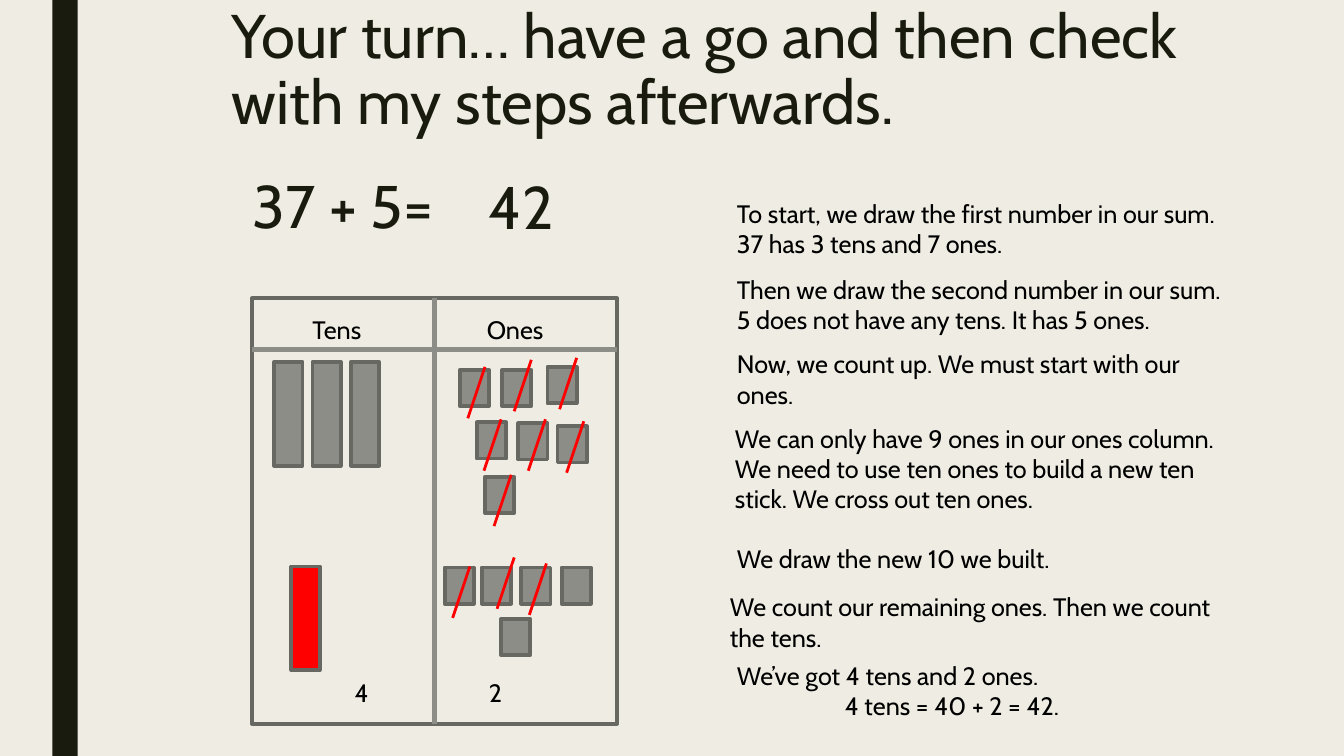
import pptx
import pptx.dml.color
import pptx.enum.shapes
import pptx.enum.text
import pptx.oxml
import pptx.util
from pptx.util import Inches

RGBColor = pptx.dml.color.RGBColor
CREAM = RGBColor(0xEF, 0xED, 0xE3)
DARK = RGBColor(0x19, 0x1B, 0x0E)
GREY = RGBColor(0x8C, 0x8D, 0x86)
EDGE = RGBColor(0x68, 0x68, 0x63)
RED = RGBColor(0xFF, 0x00, 0x00)
BLACK = RGBColor(0x00, 0x00, 0x00)

TEN_SIZE = (0.28, 1.03)
ONE_SIZE = (0.29, 0.36)
SLASH_SIZE = (0.17, 0.51)
CROSSED_ONES = [
    (2.06, 0.71, 0.08, -0.03),
    (2.48, 0.71, 0.12, -0.10),
    (2.93, 0.68, 0.12, -0.09),
    (2.23, 1.23, 0.07, -0.03),
    (2.64, 1.24, 0.10, -0.04),
    (3.03, 1.27, 0.09, -0.05),
    (2.31, 1.77, 0.09, -0.02),
    (1.91, 2.67, 0.08, -0.01),
    (2.28, 2.67, 0.15, -0.10),
    (2.67, 2.67, 0.08, -0.04),
]
REMAINING_ONES = [(3.07, 2.67), (2.47, 3.18)]
STEPS = [
    (0.07, 0, 0.71, ["To start, we draw the first number in our sum.",
                     "37 has 3 tens and 7 ones."]),
    (0.07, 0.75, 0.71, ["Then we draw the second number in our sum.",
                        "5 does not have any tens. It has 5 ones."]),
    (0.07, 1.49, 0.71, ["Now, we count up. We must start with our ones."]),
    (0.05, 2.23, 1.01, ["We can only have 9 ones in our ones column. We need to use "
                        "ten ones to build a new ten stick. We cross out ten ones."]),
    (0.07, 3.42, 0.4, ["We draw the new 10 we built."]),
    (0, 3.9, 0.71, ["We count our remaining ones. Then we count the tens."]),
    (0.07, 4.58, 0.71, ["We’ve got 4 tens and 2 ones.",
                        "4 tens = 40 + 2 = 42."]),
]


def add_text(page, box, *lines, size=18, color=BLACK, spacing=None, last_indent=0):
    frame = page.shapes.add_textbox(*map(Inches, box)).text_frame
    frame.word_wrap = True
    frame.vertical_anchor = pptx.enum.text.MSO_ANCHOR.TOP
    for index, line in enumerate(lines):
        para = frame.paragraphs[0] if index == 0 else frame.add_paragraph()
        if spacing:
            para.line_spacing = spacing
        span = para.add_run()
        span.text = line
        span.font.name = "Cabin"
        span.font.size = pptx.util.Pt(size)
        span.font.color.rgb = color
    if last_indent:
        para._p.get_or_add_pPr().set("marL", str(Inches(last_indent)))


def add_block(page, box, fill=None, edge=EDGE):
    block = page.shapes.add_shape(
        pptx.enum.shapes.MSO_SHAPE.RECTANGLE, *map(Inches, box))
    block.shadow.inherit = False
    if fill is None:
        block.fill.background()
    else:
        block.fill.solid()
        block.fill.fore_color.rgb = fill
    if edge is None:
        block.line.fill.background()
    else:
        block.line.color.rgb = edge
        block.line.width = pptx.util.Pt(2.75)


def add_line(page, start, end, color, width):
    line = page.shapes.add_connector(
        pptx.enum.shapes.MSO_CONNECTOR.STRAIGHT, *map(Inches, (*start, *end)))
    line.line.color.rgb = color
    line.line.width = pptx.util.Pt(width)
    line._element.spPr.append(pptx.oxml.parse_xml(
        '<a:effectLst xmlns:a="http://schemas.openxmlformats.org/drawingml/2006/main"/>'))


def add_heading(page, box):
    left, top, width, height = box
    add_text(page, (left, top, width, 1.62),
             "Your turn… have a go and then check with my steps afterwards.",
             size=44, color=DARK, spacing=0.89)
    for text, x, y in [("37 + 5=", 0.21, 1.76), ("42", 2.55, 1.77)]:
        add_text(page, (left + x, top + y, width, 0.67), text,
                 size=42.9, color=DARK, spacing=0.79)


def add_place_value_chart(page, box):
    left, top, width, height = box
    middle, header = left + width / 2, top + 0.51
    add_block(page, box)
    add_line(page, (middle, top), (middle, top + height), GREY, 3.75)
    add_line(page, (left, header), (left + width, header), GREY, 3.75)
    for text, x, y, text_width in [("Tens", 0.5, 0.11, 1.56), ("Ones", 2.23, 0.11, 1.56),
                                   ("4", 0.92, 3.71, 0.87), ("2", 2.25, 3.71, 0.87)]:
        add_text(page, (left + x, top + y, text_width, 0.4), text)

    for column in range(3):
        add_block(page, (left + 0.22 + 0.38 * column, top + 0.63, *TEN_SIZE), GREY)
    add_block(page, (left + 0.39, top + 2.66, *TEN_SIZE), RED)

    for x, y in REMAINING_ONES + [one[:2] for one in CROSSED_ONES]:
        add_block(page, (left + x, top + y, *ONE_SIZE), GREY)
    for x, y, shift_x, shift_y in CROSSED_ONES:
        slash_left, slash_top = left + x + shift_x, top + y + shift_y
        add_line(page, (slash_left, slash_top + SLASH_SIZE[1]),
                 (slash_left + SLASH_SIZE[0], slash_top), RED, 2)


def add_steps(page, box):
    left, top, width, height = box
    for x, y, step_height, lines in STEPS:
        indent = 1.07 if lines is STEPS[-1][3] else 0
        add_text(page, (left + x, top + y, width, step_height), *lines,
                 last_indent=indent)


def main():
    deck = pptx.Presentation()
    deck.slide_width, deck.slide_height = Inches(13.33), Inches(7.5)
    page = deck.slides.add_slide(deck.slide_layouts[6])
    page.background.fill.solid()
    page.background.fill.fore_color.rgb = CREAM
    add_block(page, (0.52, 0, 0.25, 7.5), DARK, edge=None)
    add_heading(page, (2.2, 0.01, 10.5, 2.44))
    add_place_value_chart(page, (2.5, 2.96, 3.62, 4.22))
    add_steps(page, (7.14, 1.92, 5.08, 5.29))
    deck.save("out.pptx")


if __name__ == "__main__":
    main()
